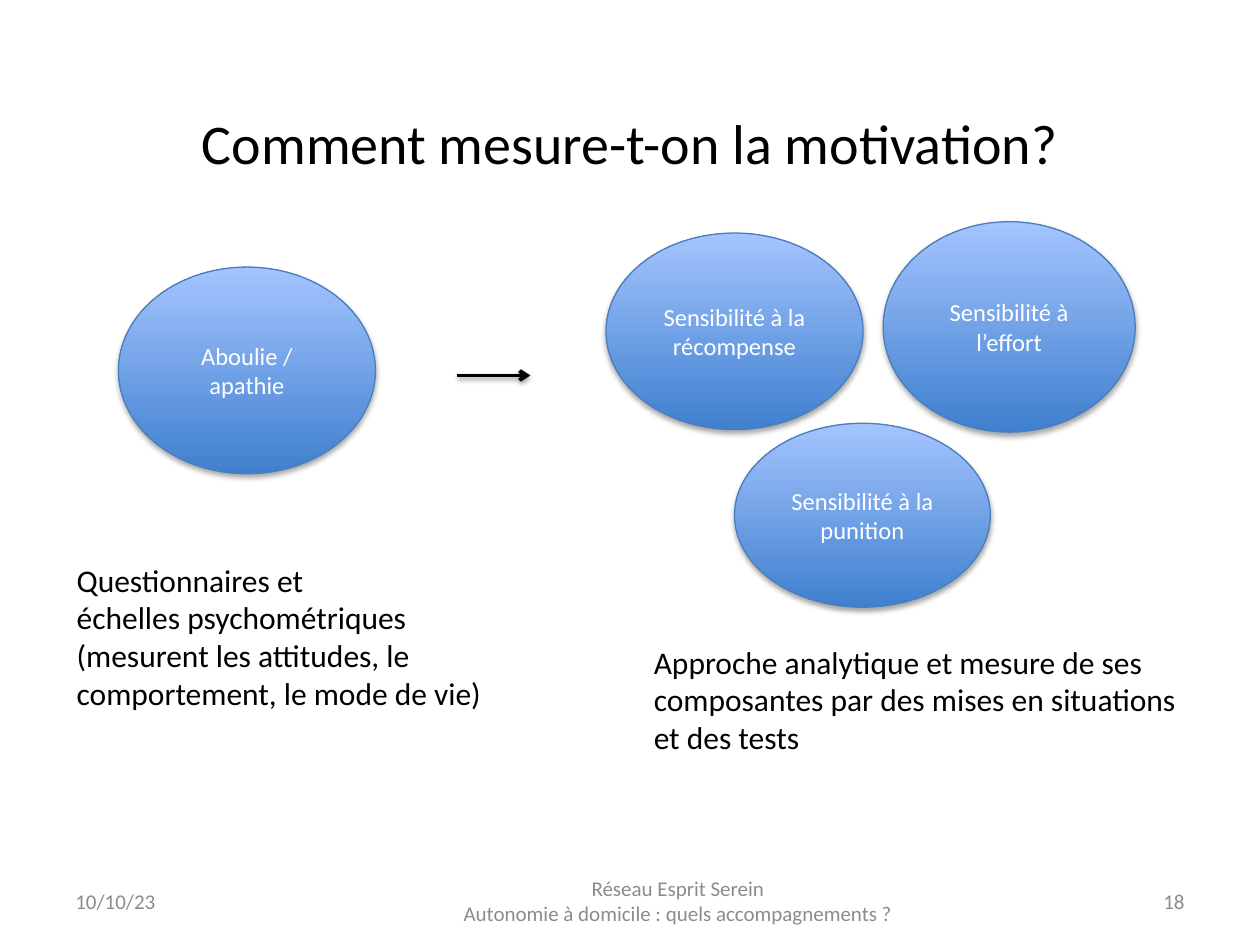
from lxml.etree import SubElement
from pptx import Presentation
from pptx.dml.color import RGBColor
from pptx.enum.shapes import MSO_CONNECTOR as CONN, MSO_SHAPE as SHAPE
from pptx.enum.text import MSO_ANCHOR as ANCHOR, PP_ALIGN as ALIGN
from pptx.oxml.ns import qn
from pptx.util import Inches, Pt

COLORS = {
    "text": "000000",
    "light": "FFFFFF",
    "footer": "8C8C8C",
    "top": "A4C4FF",
    "bottom": "3F80CE",
    "outline": "4B7EBC",
}


def rgb(name):
    return RGBColor.from_string(COLORS[name])


def write(sp, text, size=18, color="text", align=ALIGN.LEFT, anchor=ANCHOR.TOP, font="Calibri"):
    tf = sp.text_frame
    tf.word_wrap = True
    tf.vertical_anchor = anchor
    for i, line in enumerate(text.split("\n")):
        p = tf.add_paragraph() if i else tf.paragraphs[0]
        p.alignment = align
        r = p.add_run()
        r.text = line
        r.font.name, r.font.size = font, Pt(size)
        r.font.color.rgb = rgb(color)


def add_shadow(effects, alpha, blur, dist):
    shadow = SubElement(effects, qn("a:outerShdw"), blurRad=str(Pt(blur)),
                        dist=str(Pt(dist)), dir="5400000", rotWithShape="0")
    black = SubElement(shadow, qn("a:srgbClr"), val=COLORS["text"])
    SubElement(black, qn("a:alpha"), val=str(alpha * 1000))


class SlideBuilder:
    """Holds the deck style and draws each kind of element on the slide."""

    def __init__(self, s):
        self.s = s

    def text(self, box, text, **fmt):
        sp = self.s.shapes.add_textbox(*map(Inches, box))
        write(sp, text, **fmt)

    def ellipse(self, box, text):
        sp = self.s.shapes.add_shape(SHAPE.OVAL, *map(Inches, box))
        sp.fill.gradient()
        sp.fill.gradient_angle = 90
        for stop, color in zip(sp.fill.gradient_stops, ("bottom", "top")):
            stop.color.rgb = rgb(color)
        sp.line.color.rgb = rgb("outline")
        sp.line.width = Pt(0.75)
        sp.shadow.inherit = False
        add_shadow(sp._element.spPr.find(qn("a:effectLst")), 35, 3.1, 1.8)
        write(sp, text, size=14, color="light", align=ALIGN.CENTER, anchor=ANCHOR.MIDDLE)

    def arrow(self, x1, y1, x2, y2):
        sp = self.s.shapes.add_connector(CONN.STRAIGHT, *map(Inches, (x1, y1, x2, y2)))
        sp.line.color.rgb = rgb("text")
        sp.line.width = Pt(2)
        SubElement(sp.line._get_or_add_ln(), qn("a:tailEnd"), type="arrow")
        add_shadow(SubElement(sp._element.spPr, qn("a:effectLst")), 38, 3.1, 1.6)

    def footer(self, left, width, text, align):
        self.text((left, 6.95, width, 0.4), text, size=12, color="footer",
                  align=align, anchor=ANCHOR.MIDDLE)


def main():
    prs = Presentation()
    prs.slide_width, prs.slide_height = Inches(10), Inches(7.5)
    b = SlideBuilder(prs.slides.add_slide(prs.slide_layouts[6]))

    b.text((0.69, 0.4, 8.62, 1.45), "Comment mesure-t-on la motivation?",
           size=32, align=ALIGN.CENTER, anchor=ANCHOR.MIDDLE)

    b.ellipse((0.94, 2.12, 2.04, 1.64), "Aboulie / apathie")
    b.arrow(3.63, 2.98, 4.21, 2.98)
    for box, component in (
        ((5.83, 3.36, 2.03, 1.46), "à la punition"),
        ((4.81, 1.85, 2.04, 1.56), "à la récompense"),
        ((7.01, 1.76, 2, 1.67), "à l’effort"),
    ):
        b.ellipse(box, f"Sensibilité {component}")

    b.text((0.51, 4.4, 3.52, 1.31),
           "Questionnaires et\néchelles psychométriques\n"
           "(mesurent les attitudes, le comportement, le mode de vie)")
    b.text((5.09, 5.05, 4.55, 1.01),
           "Approche analytique et mesure de ses composantes "
           "par des mises en situations et des tests")

    b.footer(7.17, 2.33, "18", ALIGN.RIGHT)
    b.footer(0.5, 2.33, "10/10/23", ALIGN.LEFT)
    b.footer(3.42, 3.92,
             "Réseau Esprit Serein\nAutonomie à domicile : quels accompagnements ?",
             ALIGN.CENTER)

    prs.save("out.pptx")


if __name__ == "__main__":
    main()
